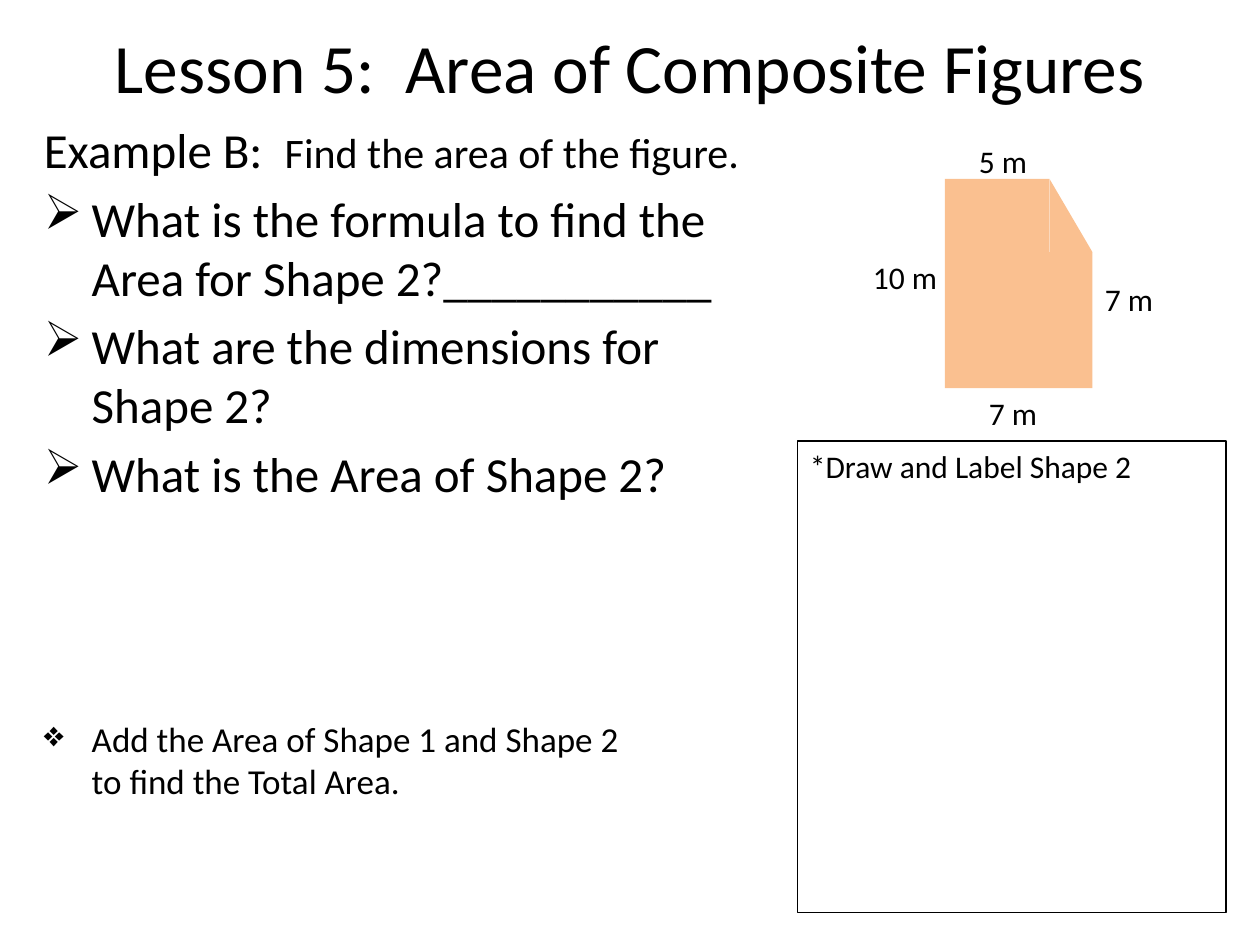
from pptx import Presentation
from pptx.dml.color import RGBColor as RGB
from pptx.enum.shapes import MSO_SHAPE as Geo
from pptx.enum.text import MSO_ANCHOR as Anchor, MSO_AUTO_SIZE as Fit, PP_ALIGN as Align
from pptx.oxml.ns import qn
from pptx.util import Inches, Pt
from lxml.etree import SubElement

THEME = dict(
    font="Calibri", ink=RGB(0, 0, 0), peach=RGB(0xFA, 0xC0, 0x90),
    title=39.6, body=28, task=24, note=20, label=18, line=0.75,
)

TITLE = "Lesson 5:  Area of Composite Figures"
# bullet, space before in points, runs of (text, size name)
BODY = [
    (None, 0, [("Example B:  ", "body"), ("Find the area of the figure.", "task")]),
    ("➢", 5.6, [("What is the formula to find the Area for Shape 2?___________", "body")]),
    ("➢", 5.6, [("What are the dimensions for Shape 2?", "body")]),
    ("➢", 5.6, [("What is the Area of Shape 2?", "body")]),
    ("❖", 123, [("Add the Area of Shape 1 and Shape 2\vto find the Total Area.", "note")]),
]
PROMPT = "*Draw and Label Shape 2"

# edges of the composite figure
LEFT, CUT, RIGHT = 7.5, 8.33, 8.67
TOP, BEND, BASE = 1.42, 2, 3.08
PARTS = [
    (Geo.RECTANGLE, LEFT, BEND, RIGHT, BASE),
    (Geo.RECTANGLE, LEFT, TOP, CUT, BEND),
    (Geo.RIGHT_TRIANGLE, CUT, TOP, RIGHT, BEND),
]
# text, left, top, width
LABELS = [
    ("10 m", 6.83, 2, 0.92),
    ("5 m", 7.67, 1.08, 0.75),
    ("7 m", 8.67, 2.17, 0.67),
    ("7 m", 7.75, 3.08, 0.67),
]


def box(*sides):
    return [Inches(side) for side in sides]


def style(run, size):
    font = run.font
    font.name, font.size = THEME["font"], Pt(THEME[size])
    font.color.rgb = THEME["ink"]


def write(frame, text, size, align=Align.LEFT):
    frame.word_wrap = True
    frame.text = text
    para = frame.paragraphs[0]
    para.alignment = align
    for run in para.runs:
        style(run, size)


def bullet(para, mark):
    """Give the paragraph a hanging bullet."""
    props = para._p.get_or_add_pPr()
    props.set("marL", str(Inches(0.38)))
    props.set("indent", str(Inches(-0.38)))
    SubElement(props, qn("a:buChar")).set("char", mark)


def add_title(slide):
    title = slide.shapes.title
    title.left, title.top, title.width, title.height = box(0.5, 0.17, 9, 0.7)
    frame = title.text_frame
    write(frame, TITLE, "title", Align.CENTER)
    frame.auto_size, frame.vertical_anchor = Fit.NONE, Anchor.MIDDLE


def add_body(slide):
    frame = slide.shapes.add_textbox(*box(0.25, 0.9, 5.83, 6.52)).text_frame
    frame.word_wrap = True
    for i, (mark, gap, runs) in enumerate(BODY):
        para = frame.add_paragraph() if i else frame.paragraphs[0]
        para.space_before = Pt(gap)
        if mark:
            bullet(para, mark)
        para.text = "".join(text for text, _ in runs[:1])
        for text, _ in runs[1:]:
            para.add_run().text = text
        for j, run in enumerate(para.runs):
            style(run, runs[min(j, len(runs) - 1)][1])


def add_frame(slide):
    shape = slide.shapes.add_shape(Geo.RECTANGLE, *box(6.33, 3.5, 3.4, 3.74))
    shape.shadow.inherit = False
    shape.fill.background()
    shape.line.color.rgb = THEME["ink"]
    shape.line.width = Pt(THEME["line"])
    write(shape.text_frame, PROMPT, "label")
    shape.text_frame.vertical_anchor = Anchor.TOP


def add_figure(slide):
    group = slide.shapes.add_group_shape().shapes
    for geo, x, y, right, base in PARTS:
        part = group.add_shape(geo, *box(x, y, right - x, base - y))
        part.shadow.inherit = False
        part.fill.solid()
        part.fill.fore_color.rgb = THEME["peach"]
        part.line.fill.background()
    for text, x, y, width in LABELS:
        label = group.add_textbox(*box(x, y, width, 0.4))
        write(label.text_frame, text, "label")


def main():
    deck = Presentation()
    deck.slide_width, deck.slide_height = box(10, 7.5)
    slide = deck.slides.add_slide(deck.slide_layouts[5])
    for add in (add_title, add_body, add_frame, add_figure):
        add(slide)
    deck.save("out.pptx")


if __name__ == "__main__":
    main()
